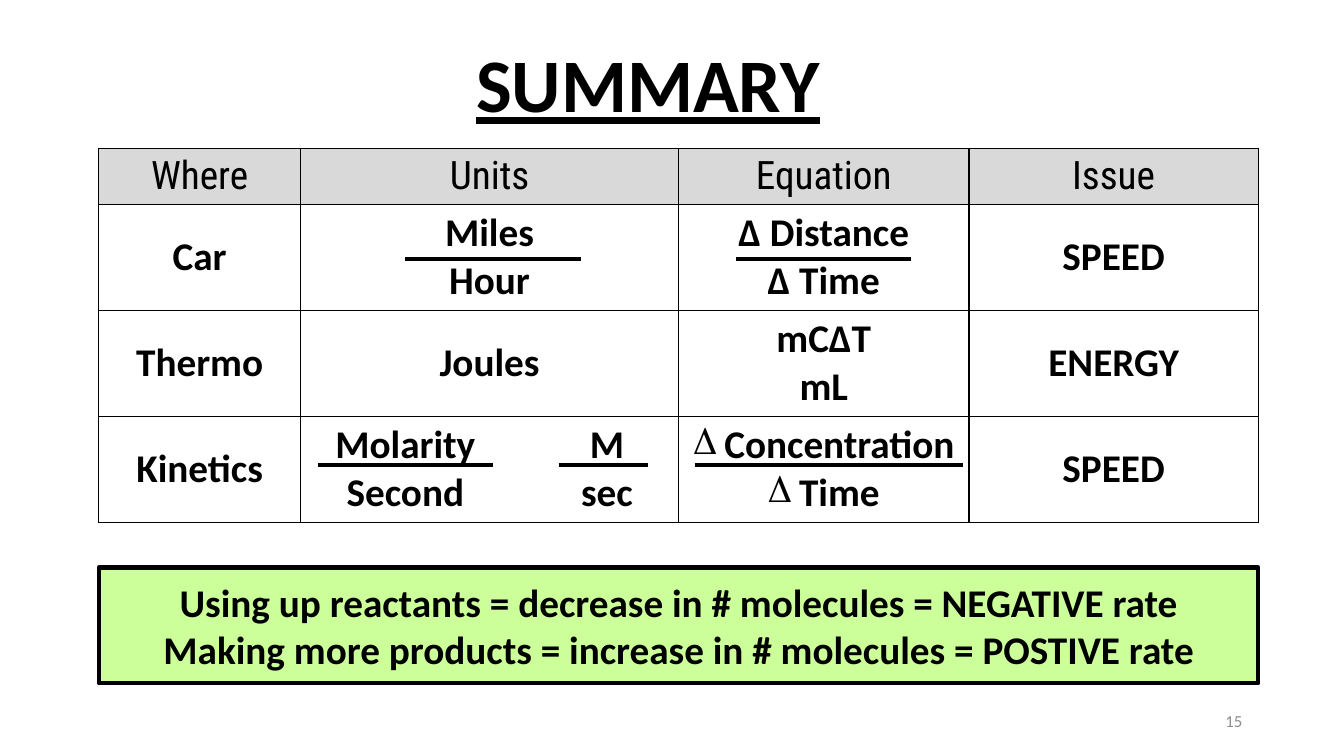
from lxml.etree import SubElement
from pptx import Presentation
from pptx.dml.color import RGBColor
from pptx.enum.shapes import MSO_CONNECTOR, MSO_SHAPE
from pptx.enum.text import MSO_ANCHOR, PP_ALIGN
from pptx.oxml.ns import qn
from pptx.util import Inches, Pt

COLORS = {"ink": "000000", "header": "D9D9D9", "rule": "CCFF99",
          "number": "8C8C8C", "paper": "FFFFFF"}
BODY_FONT = "Calibri"
HEADER_FONT = "Roboto Condensed"

LEFT, WIDTH = 0.98, 11.5
COLUMN_WIDTHS = [2, 3.75, 2.88, 2.87]
ROW_HEIGHTS = [0.56, 1.05, 1.05, 1.05]
SUMMARY_ROWS = [
    ["Where", "Units", "Equation", "Issue"],
    ["Car", "Miles\nHour", "Δ Distance\nΔ Time", "SPEED"],
    ["Thermo", "Joules", "mCΔT\nmL", "ENERGY"],
    ["Kinetics", "\tMolarity\tM\n\tSecond\tsec", "Concentration\nTime", "SPEED"],
]
KINETICS_UNITS, KINETICS_EQUATION = (3, 1), (3, 2)
# Height of the fraction bars, then the left end and length of each
FRACTION_BARS = {2.57: [(4.02, 1.74), (7.3, 1.74)],
                 4.61: [(6.89, 2.66), (3.15, 1.74), (5.54, 0.89)]}


def color(name):
    return RGBColor.from_string(COLORS[name])


def write(frame, text, size=28, font=BODY_FONT, ink="ink", bold=True,
          underline=None, align=PP_ALIGN.CENTER, bullet=None, tabs=()):
    """Fill a text frame, one paragraph a line; tabs are centred stops in inches."""
    for index, line in enumerate(text.split("\n")):
        paragraph = frame.paragraphs[0] if index == 0 else frame.add_paragraph()
        paragraph.alignment = align
        run = paragraph.add_run()
        run.text = line
        run.font.size = Pt(size)
        run.font.name = font
        run.font.bold = bold
        run.font.underline = underline
        run.font.color.rgb = color(ink)
        properties = paragraph._p.get_or_add_pPr()
        if bullet:
            properties.set("marL", str(Inches(0.31)))
            properties.set("indent", str(-Inches(0.31)))
            SubElement(properties, qn("a:buChar"), char=bullet)
        if tabs:
            stops = SubElement(properties, qn("a:tabLst"))
            for stop in tabs:
                SubElement(stops, qn("a:tab"), pos=str(Inches(stop)), algn="ctr")


class SummarySlide:
    def __init__(self, presentation):
        self.slide = presentation.slides.add_slide(presentation.slide_layouts[5])
        self.line_width = Pt(3)

    def title(self, text, left, top, width, height):
        heading = self.slide.shapes.title
        heading.left, heading.top = Inches(left), Inches(top)
        heading.width, heading.height = Inches(width), Inches(height)
        heading.text_frame.vertical_anchor = MSO_ANCHOR.TOP
        write(heading.text_frame, text, size=54, underline=True)

    def table(self, rows, left, top):
        table = self.slide.shapes.add_table(
            len(rows), len(rows[0]), Inches(left), Inches(top),
            Inches(sum(COLUMN_WIDTHS)), Inches(sum(ROW_HEIGHTS))).table
        table.first_row = table.horz_banding = False
        for column, width in zip(table.columns, COLUMN_WIDTHS):
            column.width = Inches(width)
        for r, row in enumerate(rows):
            table.rows[r].height = Inches(ROW_HEIGHTS[r])
            for c, text in enumerate(row):
                self.cell(table.cell(r, c), text, (r, c))

    def cell(self, cell, text, place):
        self.border(cell)
        cell.fill.solid()
        if place[0] == 0:
            cell.fill.fore_color.rgb = color("header")
            write(cell.text_frame, text, font=HEADER_FONT, bold=False)
            return
        cell.fill.fore_color.rgb = color("paper")
        cell.vertical_anchor = MSO_ANCHOR.MIDDLE
        if place == KINETICS_UNITS:
            write(cell.text_frame, text, align=PP_ALIGN.LEFT, tabs=(0.94, 2.94))
        else:
            write(cell.text_frame, text,
                  bullet="Δ" if place == KINETICS_EQUATION else None)

    def border(self, cell):
        properties = cell._tc.get_or_add_tcPr()
        for side in ("a:lnL", "a:lnR", "a:lnT", "a:lnB"):
            edge = SubElement(properties, qn(side), w=str(Pt(1)))
            fill = SubElement(edge, qn("a:solidFill"))
            SubElement(fill, qn("a:srgbClr"), val=COLORS["ink"])

    def fraction_bar(self, left, top, length):
        bar = self.slide.shapes.add_connector(
            MSO_CONNECTOR.STRAIGHT, Inches(left), Inches(top),
            Inches(left + length), Inches(top))
        bar.line.color.rgb = color("ink")
        bar.line.width = self.line_width
        SubElement(bar._element.spPr, qn("a:effectLst"))

    def box(self, text, left, top, width, height):
        box = self.slide.shapes.add_shape(
            MSO_SHAPE.RECTANGLE, Inches(left), Inches(top),
            Inches(width), Inches(height))
        box.shadow.inherit = False
        box.fill.solid()
        box.fill.fore_color.rgb = color("rule")
        box.line.color.rgb = color("ink")
        box.line.width = self.line_width
        box.text_frame.word_wrap = True
        box.text_frame.vertical_anchor = MSO_ANCHOR.MIDDLE
        write(box.text_frame, text)

    def label(self, text, left, top, width, height, **style):
        frame = self.slide.shapes.add_textbox(
            Inches(left), Inches(top), Inches(width), Inches(height)).text_frame
        frame.word_wrap = True
        frame.vertical_anchor = MSO_ANCHOR.MIDDLE
        write(frame, text, **style)


def main():
    presentation = Presentation()
    presentation.slide_width = Inches(13.33)
    presentation.slide_height = Inches(7.5)

    summary = SummarySlide(presentation)
    summary.title("SUMMARY", 3.09, 0.32, 6.67, 1.01)
    summary.table(SUMMARY_ROWS, LEFT, 1.47)
    for top, bars in FRACTION_BARS.items():
        for left, length in bars:
            summary.fraction_bar(left, top, length)
    summary.box("Using up reactants = decrease in # molecules = NEGATIVE rate\n"
                "Making more products = increase in # molecules = POSTIVE rate",
                LEFT, 5.63, WIDTH, 1.15)
    summary.label("15", 9.42, 6.95, 3, 0.4, size=12, ink="number",
                  bold=False, align=PP_ALIGN.RIGHT)
    presentation.save("out.pptx")


if __name__ == "__main__":
    main()
